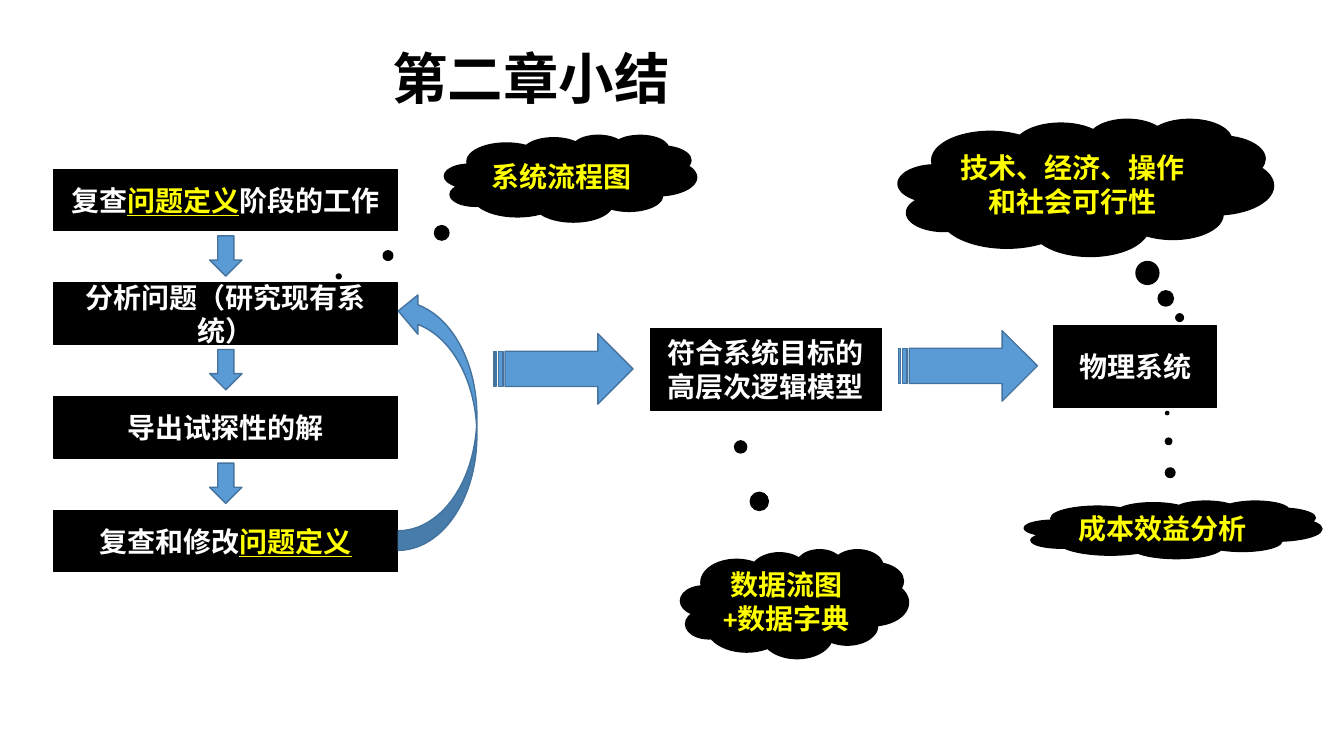
from pptx import Presentation
from pptx.dml.color import RGBColor
from pptx.enum.shapes import MSO_SHAPE
from pptx.enum.text import MSO_ANCHOR, MSO_AUTO_SIZE, PP_ALIGN
from pptx.oxml.ns import qn
from pptx.util import Inches, Pt

TITLE = "第二章小结"
STEPS = [
    [("复查", "plain"), ("问题定义", "key"), ("阶段的工作", "plain")],
    [("分析问题（研究现有系统）", "plain")],
    [("导出试探性的解", "plain")],
    [("复查和修改", "plain"), ("问题定义", "key")],
]
RESULTS = [
    ("符合系统目标的高层次逻辑模型", (48.39, 43.47, 17.18, 10.8)),
    ("物理系统", (78.39, 43.07, 12.15, 10.8)),
]
CLOUDS = [
    ("技术、经济、操作和社会可行性", (66.84, 15.73, 27.91, 18.13), (0.25, 0.95), 0.1),
    ("系统流程图", (33.08, 17.87, 18.75, 11.47), (-0.92, 1.13), 0.1),
    ("数据流图+数据字典", (50.64, 72.67, 16.95, 14.4), (-0.31, -1.89), 0),
    ("成本效益分析", (76.22, 66.27, 22.13, 7.6), (-0.02, -2.03), 0.1),
]
COLORS = {"black": "000000", "white": "FFFFFF", "yellow": "FFFF00",
          "blue": "5B9BD5", "edge": "43739E"}
CJK = "Noto Sans CJK SC"
STYLES = {
    "title": ("black", {"size": Pt(39.6), "name": "Lato", "bold": True}),
    "plain": ("white", {"size": Pt(20), "name": CJK, "bold": True}),
    "key": ("yellow", {"size": Pt(20), "name": CJK, "bold": True, "underline": True}),
    "cloud": ("yellow", {"size": Pt(20), "name": "Calibri", "bold": True}),
}
TITLE_BOX = (2.33, 5.73, 74.34, 10)
STEP_BOX = (3.98, 22.4, 25.58, 8.13)
DOWN_BOX = (15.6, 31.2, 2.4, 5.33)
PITCH = 15.03
LOOP_BOX = (29.63, 38.53, 5.85, 34.27)
STRIPED_BOXES = [(36.76, 44.13, 10.35, 9.33), (66.84, 43.73, 10.35, 9.33)]

prs = Presentation()
prs.slide_width, prs.slide_height = Inches(13.33), Inches(7.5)
s = prs.slides.add_slide(prs.slide_layouts[5])


def place(box):
    sides = (prs.slide_width, prs.slide_height) * 2
    return [round(share * side / 100) for share, side in zip(box, sides)]


def row(box, i):
    left, top, width, height = box
    return left, top + i * PITCH, width, height


def write(sp, runs, inset=0.1):
    tf = sp.text_frame
    frame = {"word_wrap": True, "auto_size": MSO_AUTO_SIZE.NONE,
             "vertical_anchor": MSO_ANCHOR.MIDDLE,
             "margin_left": Inches(inset), "margin_right": Inches(inset)}
    for key, value in frame.items():
        setattr(tf, key, value)
    p = tf.paragraphs[0]
    p.alignment = PP_ALIGN.CENTER
    for text, style in runs:
        r = p.add_run()
        r.text = text
        color, font = STYLES[style]
        r.font.color.rgb = RGBColor.from_string(COLORS[color])
        for key, value in font.items():
            setattr(r.font, key, value)
        ea = r.font._element.makeelement(qn("a:ea"), {"typeface": CJK})
        r.font._element.find(qn("a:latin")).addnext(ea)
    return p


def shape(kind, box, fill="black", line="black"):
    sp = s.shapes.add_shape(kind, *place(box))
    sp.shadow.inherit = False
    sp.fill.solid()
    sp.fill.fore_color.rgb = RGBColor.from_string(COLORS[fill])
    sp.line.color.rgb = RGBColor.from_string(COLORS[line])
    sp.line.width = Pt(1)
    return sp


def arrow(kind, box):
    return shape(kind, box, "blue", "edge")


title = s.shapes.title
title.left, title.top, title.width, title.height = place(TITLE_BOX)
write(title, [(TITLE, "title")]).line_spacing = 0.9

for i, runs in enumerate(STEPS):
    write(shape(MSO_SHAPE.RECTANGLE, row(STEP_BOX, i)), runs)
for i in range(len(STEPS) - 1):
    arrow(MSO_SHAPE.DOWN_ARROW, row(DOWN_BOX, i))

loop = arrow(MSO_SHAPE.CURVED_LEFT_ARROW, LOOP_BOX)
loop.rotation = 180
loop._element.spPr.find(qn("a:xfrm")).set("flipH", "1")

for box in STRIPED_BOXES:
    arrow(MSO_SHAPE.STRIPED_RIGHT_ARROW, box)
for text, box in RESULTS:
    write(shape(MSO_SHAPE.RECTANGLE, box), [(text, "plain")])
for text, box, tail, inset in CLOUDS:
    cloud = shape(MSO_SHAPE.CLOUD_CALLOUT, box)
    for i, value in enumerate(tail):
        cloud.adjustments[i] = value
    write(cloud, [(text, "cloud")], inset)

prs.save("out.pptx")
